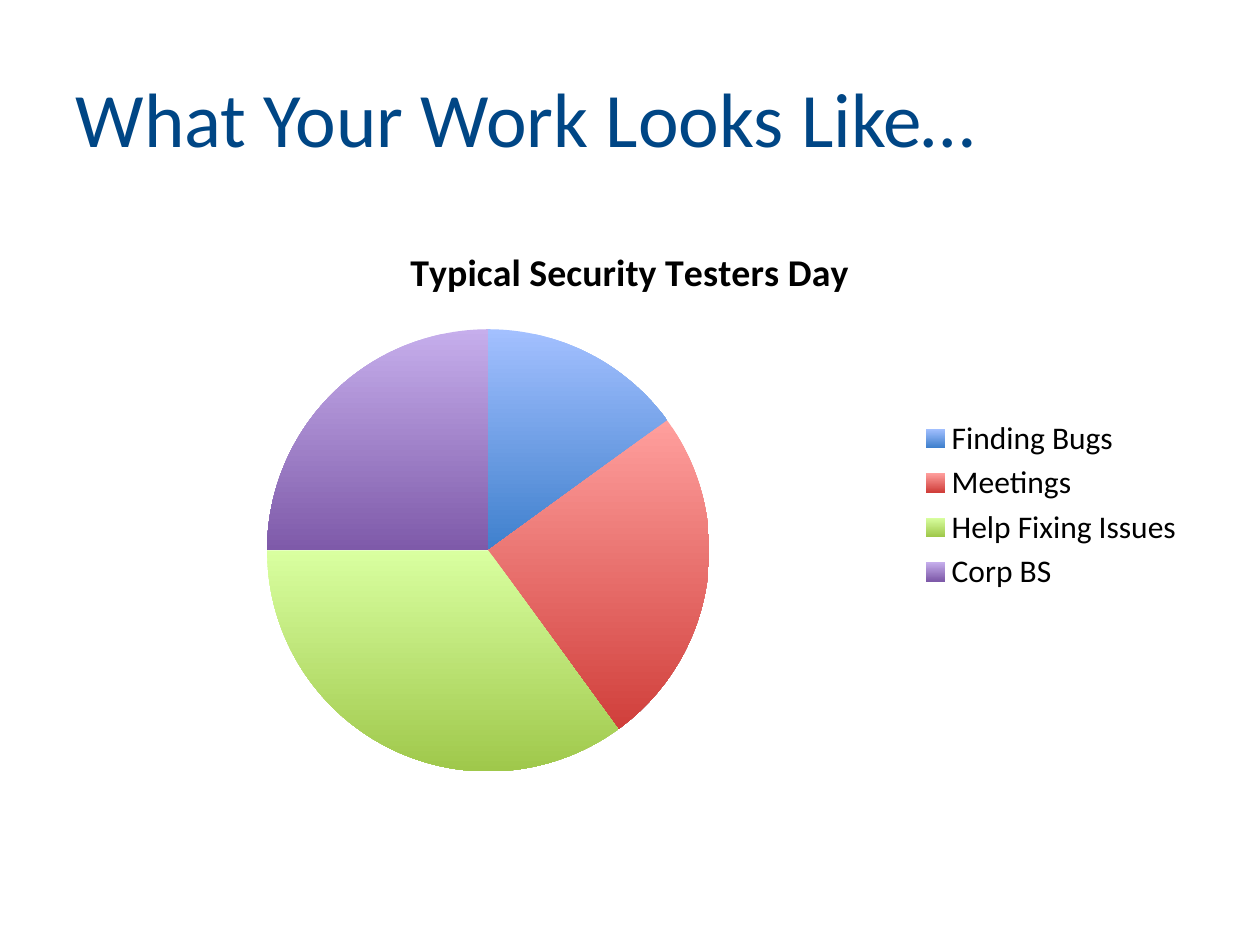
from dataclasses import dataclass

from lxml.etree import SubElement
from pptx import Presentation
from pptx.chart.chart import Chart
from pptx.chart.data import CategoryChartData
from pptx.dml.color import RGBColor
from pptx.enum.chart import XL_CHART_TYPE, XL_LEGEND_POSITION
from pptx.enum.text import MSO_ANCHOR, PP_ALIGN
from pptx.oxml.ns import qn
from pptx.slide import Slide
from pptx.text.text import Font
from pptx.util import Cm, Pt

COLORS = {
    "title": "004685",
    "text": "000000",
    "blue_top": "A3C0FF", "blue_bottom": "3F80CD",
    "red_top": "FF9F9D", "red_bottom": "D03F3B",
    "green_top": "D9FFA0", "green_bottom": "9FC84B",
    "purple_top": "C6AEEC", "purple_bottom": "7E5AA9",
}
TITLE_BOX = {"left": Cm(1.27), "top": Cm(0.76), "width": Cm(22.86), "height": Cm(3.18)}
CHART_BOX = (Cm(1.27), Cm(4.45), Cm(22.86), Cm(11.46))
PIE_AREA = {"x": 0.18, "y": 0.19, "w": 0.39, "h": 0.78}


@dataclass(frozen=True)
class Slice:
    label: str
    share: int
    hue: str


SLICES = [
    Slice("Finding Bugs", 15, "blue"),
    Slice("Meetings", 25, "red"),
    Slice("Help Fixing Issues", 35, "green"),
    Slice("Corp BS", 25, "purple"),
]


def color(name: str) -> RGBColor:
    return RGBColor.from_string(COLORS[name])


def format_font(font: Font, size: float, color_name: str, bold: bool = False) -> None:
    for attribute, value in {"name": "Calibri", "size": Pt(size), "bold": bold}.items():
        setattr(font, attribute, value)
    font.color.rgb = color(color_name)


def add_title(slide: Slide, text: str) -> None:
    title = slide.shapes.title
    for attribute, value in TITLE_BOX.items():
        setattr(title, attribute, value)
    title.text_frame.text = text
    title.text_frame.vertical_anchor = MSO_ANCHOR.MIDDLE
    paragraph = title.text_frame.paragraphs[0]
    paragraph.alignment = PP_ALIGN.LEFT
    format_font(paragraph.font, 44, "title")


def place_pie(chart: Chart) -> None:
    """Fix the inner plot area as fractions of the chart."""
    plot_area = chart.plots[0]._element.getparent()
    for old_layout in plot_area.findall(qn("c:layout")):
        plot_area.remove(old_layout)
    layout = SubElement(plot_area, qn("c:layout"))
    plot_area.insert(0, layout)
    manual = SubElement(layout, qn("c:manualLayout"))
    settings = {"layoutTarget": "inner", "xMode": "edge", "yMode": "edge", **PIE_AREA}
    for tag, value in settings.items():
        SubElement(manual, qn(f"c:{tag}")).set("val", str(value))


def color_slices(chart: Chart, slices: list[Slice]) -> None:
    points = chart.plots[0].series[0].points
    for index, pie_slice in enumerate(slices):
        point_format = points[index].format
        point_format.line.fill.background()
        fill = point_format.fill
        fill.gradient()
        fill.gradient_angle = 270
        for stop, end in zip(fill.gradient_stops, ("top", "bottom")):
            stop.color.rgb = color(f"{pie_slice.hue}_{end}")


def add_pie(slide: Slide, heading: str, slices: list[Slice]) -> None:
    data = CategoryChartData()
    data.categories = [pie_slice.label for pie_slice in slices]
    data.add_series("Series 1", [pie_slice.share for pie_slice in slices])
    chart = slide.shapes.add_chart(XL_CHART_TYPE.PIE, *CHART_BOX, data).chart
    format_font(chart.font, 18, "text")

    chart.has_title = True
    chart.chart_title.include_in_layout = False
    chart.chart_title.text_frame.text = heading
    heading_run = chart.chart_title.text_frame.paragraphs[0].runs[0]
    format_font(heading_run.font, 21.6, "text", bold=True)

    chart.has_legend = True
    chart.legend.position = XL_LEGEND_POSITION.RIGHT
    chart.legend.include_in_layout = False
    format_font(chart.legend.font, 18, "text")

    chart.plots[0].vary_by_categories = True
    place_pie(chart)
    color_slices(chart, slices)


def main() -> None:
    presentation = Presentation()
    presentation.slide_width, presentation.slide_height = Cm(25.4), Cm(19.05)
    title_only = presentation.slide_layouts.get_by_name("Title Only")
    slide = presentation.slides.add_slide(title_only)
    add_title(slide, "What Your Work Looks Like…")
    add_pie(slide, "Typical Security Testers Day", SLICES)
    presentation.save("out.pptx")


if __name__ == "__main__":
    main()
